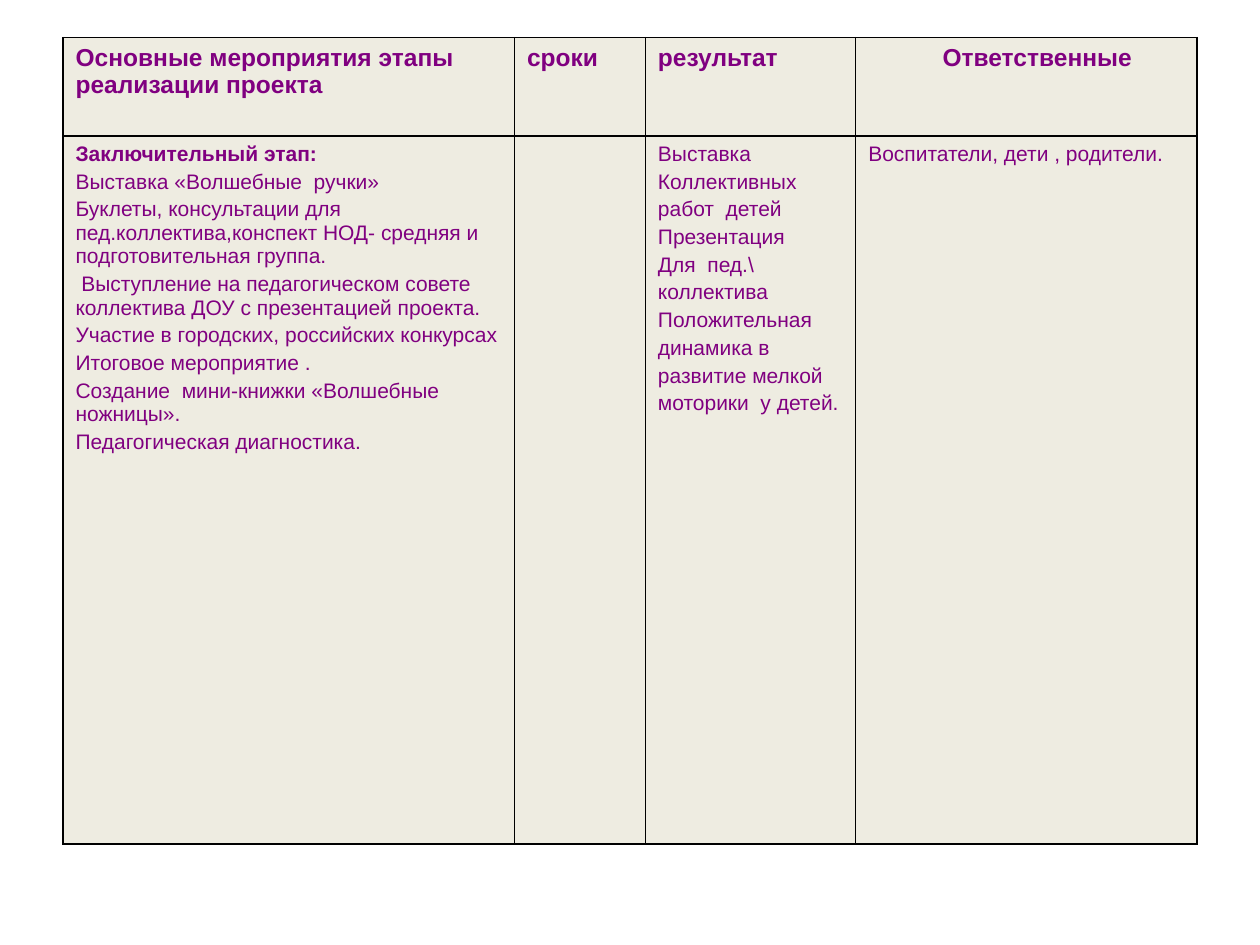
from lxml.etree import SubElement
from pptx import Presentation
from pptx.dml.color import RGBColor
from pptx.oxml.ns import qn
from pptx.util import Cm, Pt

PURPLE = RGBColor(0x80, 0x00, 0x80)
CREAM = RGBColor(0xEE, 0xEC, 0xE1)
BLACK = RGBColor(0x00, 0x00, 0x00)

HEADS = ["Основные мероприятия этапы реализации проекта", "сроки",
         "результат", "Ответственные"]
STAGE = [
    "Заключительный этап:",
    "Выставка «Волшебные  ручки»",
    "Буклеты, консультации для пед.коллектива,конспект НОД- средняя и "
    "подготовительная группа.",
    " Выступление на педагогическом совете коллектива ДОУ с презентацией проекта.",
    "Участие в городских, российских конкурсах",
    "Итоговое мероприятие .",
    "Создание  мини-книжки «Волшебные ножницы».",
    "Педагогическая диагностика.",
]
RESULT = ["Выставка", "Коллективных", "работ  детей", "Презентация",
          "Для  пед.\\", "коллектива", "Положительная", "динамика в",
          "развитие мелкой", "моторики  у детей."]
STAFF = ["Воспитатели, дети , родители."]
ROWS = [[[head] for head in HEADS], [STAGE, [], RESULT, STAFF]]


def add_edges(cell):
    """Draw a thin black line on all four sides of a cell."""
    props = cell._tc.get_or_add_tcPr()
    for side in ("a:lnL", "a:lnR", "a:lnT", "a:lnB"):
        line = SubElement(props, qn(side), w=str(Pt(1)))
        fill = SubElement(line, qn("a:solidFill"))
        SubElement(fill, qn("a:srgbClr"), val=str(BLACK))


def add_text(cell, lines, head):
    """Write one paragraph per line; the stage name is bold like the heads."""
    frame = cell.text_frame
    for i, line in enumerate(lines):
        para = frame.add_paragraph() if i else frame.paragraphs[0]
        if i:
            para.space_before = Pt(2.4)
        run = para.add_run()
        run.text = line
        run.font.name = "Arial"
        run.font.size = Pt(14 if head else 12)
        run.font.bold = head or line == STAGE[0]
        run.font.color.rgb = PURPLE


# Slide
deck = Presentation()
deck.slide_width, deck.slide_height = Cm(25.4), Cm(19.05)
slide = deck.slides.add_slide(deck.slide_layouts[6])

# Table grid
frame = slide.shapes.add_table(2, 4, Cm(1.27), Cm(0.76), Cm(22.86), Cm(16.25))
table = frame.table
for col, width in zip(table.columns, (9.1, 2.64, 4.24, 6.88)):
    col.width = Cm(width)
for row, height in zip(table.rows, (1.98, 14.27)):
    row.height = Cm(height)

# Cells
for r, row in enumerate(ROWS):
    for c, lines in enumerate(row):
        cell = table.cell(r, c)
        add_edges(cell)
        cell.fill.solid()
        cell.fill.fore_color.rgb = CREAM
        add_text(cell, lines, r == 0)

# The last head is set in from the left
table.cell(0, 3).margin_left = Cm(1.75)

deck.save("out.pptx")
